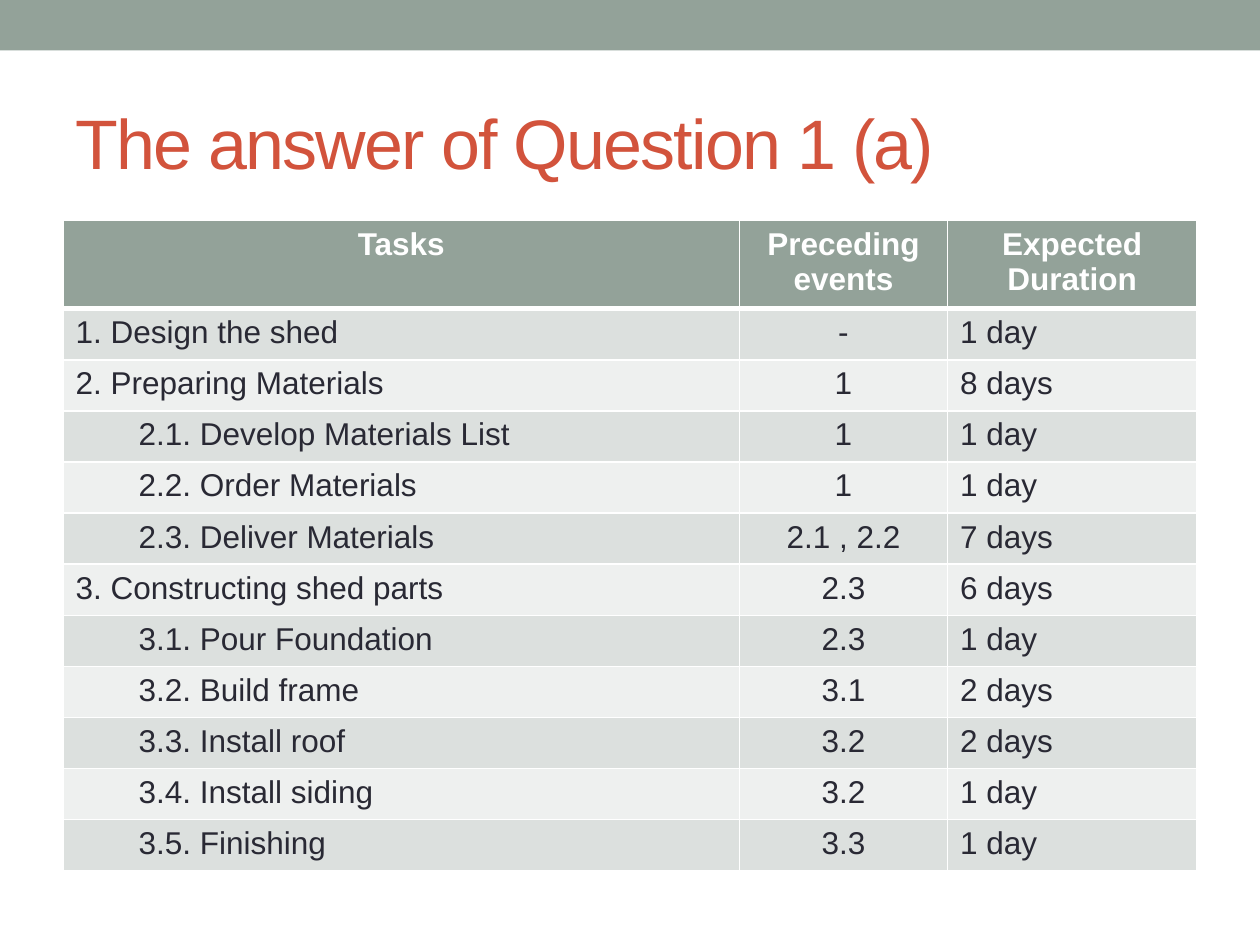
from lxml.etree import SubElement
from pptx import Presentation
from pptx.dml.color import RGBColor
from pptx.enum.shapes import MSO_SHAPE as Shape
from pptx.enum.text import MSO_ANCHOR as Anchor, PP_ALIGN as Align
from pptx.oxml.ns import qn
from pptx.util import Pt

SAGE = RGBColor(0x93, 0xA2, 0x99)
BRICK = RGBColor(0xD2, 0x53, 0x3C)
INK = RGBColor(0x29, 0x29, 0x34)
WHITE = RGBColor(0xFF, 0xFF, 0xFF)
BANDS = RGBColor(0xDC, 0xE0, 0xDE), RGBColor(0xEE, 0xF0, 0xEF)

HEADINGS = "Tasks", "Preceding events", "Expected Duration"
TASKS = [
    ("1. Design the shed", "-", "1 day"),
    ("2. Preparing Materials", "1", "8 days"),
    ("2.1. Develop Materials List", "1", "1 day"),
    ("2.2. Order Materials", "1", "1 day"),
    ("2.3. Deliver Materials", "2.1 , 2.2", "7 days"),
    ("3. Constructing shed parts", "2.3", "6 days"),
    ("3.1. Pour Foundation", "2.3", "1 day"),
    ("3.2. Build frame", "3.1", "2 days"),
    ("3.3. Install roof", "3.2", "2 days"),
    ("3.4. Install siding", "3.2", "1 day"),
    ("3.5. Finishing", "3.3", "1 day"),
]
COLUMN_WIDTHS = 386.6, 118.8, 142.6
COLUMN_ALIGNS = Align.LEFT, Align.CENTER, Align.LEFT
HEADER_HEIGHT, TASK_HEIGHT = 46.8, 29.2
SUBTASK_INDENT = 36


class SlideBuilder:
    font_name = "Arial"

    def __init__(self, slide):
        self.slide = slide

    def add_text(self, frame, text, color, align=Align.LEFT, **font_format):
        paragraph = frame.paragraphs[0]
        paragraph.alignment = align
        run = paragraph.add_run()
        run.text = text
        run.font.color.rgb = color
        for key, value in {"name": self.font_name, **font_format}.items():
            setattr(run.font, key, value)
        return paragraph

    def band(self, left, top, width, height, color):
        band = self.slide.shapes.add_shape(
            Shape.RECTANGLE, Pt(left), Pt(top), Pt(width), Pt(height))
        band.shadow.inherit = False
        band.fill.solid()
        band.fill.fore_color.rgb = color
        band.line.fill.background()

    def title(self, left, top, width, height, text):
        title = self.slide.shapes.add_textbox(
            Pt(left), Pt(top), Pt(width), Pt(height))
        frame = title.text_frame
        frame.word_wrap = True
        frame.vertical_anchor = Anchor.MIDDLE
        heading = self.add_text(frame, text, BRICK, size=Pt(40))
        heading.runs[0].font._element.set("spc", "-100")

    def borders(self, cell, **widths):
        """Draw white cell borders; widths are in points, keyed L, R, T, B."""
        properties = cell._tc.get_or_add_tcPr()
        for side, width in widths.items():
            line = SubElement(properties, qn(f"a:ln{side}"), w=str(Pt(width)))
            fill = SubElement(line, qn("a:solidFill"))
            SubElement(fill, qn("a:srgbClr"), val=str(WHITE))

    def cell(self, cell, text, fill, color, align, top=1, bottom=1, bold=False):
        self.borders(cell, L=1, R=1, T=top, B=bottom)
        cell.fill.solid()
        cell.fill.fore_color.rgb = fill
        return self.add_text(cell.text_frame, text, color, align,
                             size=Pt(18), bold=bold)

    def task_table(self, left, top):
        height = HEADER_HEIGHT + TASK_HEIGHT * len(TASKS)
        table = self.slide.shapes.add_table(
            len(TASKS) + 1, len(HEADINGS), Pt(left), Pt(top),
            Pt(sum(COLUMN_WIDTHS)), Pt(height)).table
        for column, width in zip(table.columns, COLUMN_WIDTHS):
            column.width = Pt(width)
        for row in table.rows:
            row.height = Pt(TASK_HEIGHT)
        table.rows[0].height = Pt(HEADER_HEIGHT)

        for col, heading in enumerate(HEADINGS):
            self.cell(table.cell(0, col), heading, SAGE, WHITE, Align.CENTER,
                      bottom=3, bold=True)
        for row, task in enumerate(TASKS, 1):
            for col, (text, align) in enumerate(zip(task, COLUMN_ALIGNS)):
                paragraph = self.cell(
                    table.cell(row, col), text, BANDS[(row - 1) % 2], INK,
                    align, top=3 if row == 1 else 1)
                is_subtask = col == 0 and text.count(".") == 2
                if is_subtask:
                    paragraph.level = 1
                    paragraph._p.get_or_add_pPr().set(
                        "marL", str(Pt(SUBTASK_INDENT)))


def main():
    deck = Presentation()
    deck.slide_width, deck.slide_height = Pt(720), Pt(540)
    builder = SlideBuilder(deck.slides.add_slide(deck.slide_layouts[6]))
    builder.band(0, 0, 720, 28.8, SAGE)
    builder.title(36, 42, 648, 78, "The answer of Question 1 (a)")
    builder.task_table(36, 126)
    deck.save("out.pptx")


if __name__ == "__main__":
    main()
